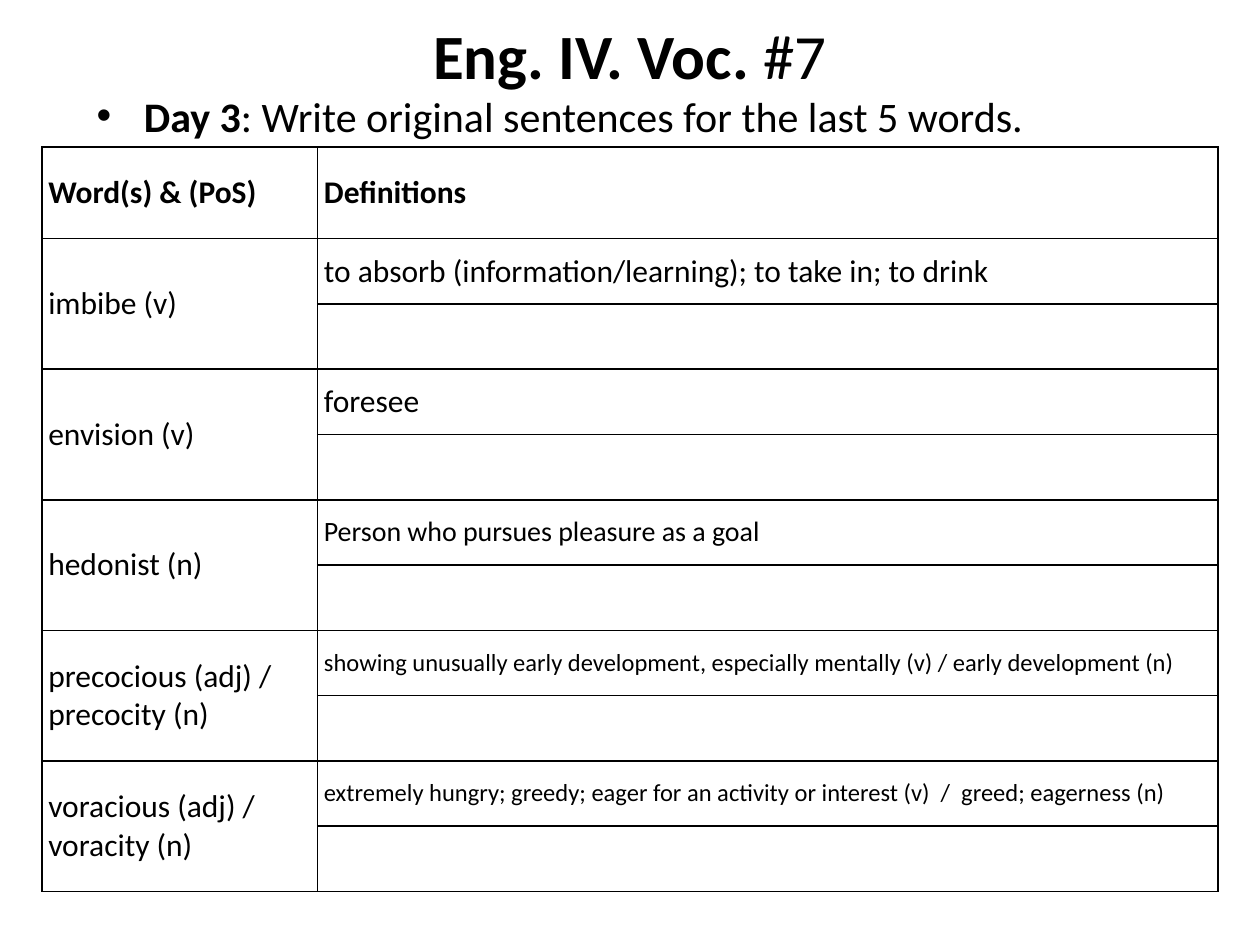
import lxml.etree
import pptx
import pptx.dml.color
import pptx.enum.text
import pptx.oxml
import pptx.oxml.ns
import pptx.util

BLACK = pptx.dml.color.RGBColor(0, 0, 0)
FONT = "Calibri"
ANCHOR = pptx.enum.text.MSO_ANCHOR
ALIGN = pptx.enum.text.PP_ALIGN


def add_text(paragraph, text, size=18, bold=False, color=BLACK):
    run = paragraph.add_run()
    run.text = text
    run.font.name = FONT
    run.font.size = pptx.util.Pt(size)
    run.font.bold = bold
    run.font.color.rgb = color


def format_cell(cell):
    cell.fill.background()
    cell.vertical_anchor = ANCHOR.MIDDLE
    cell.margin_left = cell.margin_right = pptx.util.Pt(3.6)
    cell.margin_top = cell.margin_bottom = 0
    properties = cell._tc.get_or_add_tcPr()
    for position, side in enumerate(("lnL", "lnR", "lnT", "lnB")):
        border = pptx.oxml.parse_xml(
            f'<a:{side} {pptx.oxml.ns.nsdecls("a")} w="{pptx.util.Pt(1)}">'
            f'<a:solidFill><a:srgbClr val="{BLACK}"/></a:solidFill></a:{side}>'
        )
        properties.insert(position, border)


presentation = pptx.Presentation()
presentation.slide_width = pptx.util.Pt(720)
presentation.slide_height = pptx.util.Pt(540)
slide = presentation.slides.add_slide(presentation.slide_layouts[1])

title = slide.shapes.title
title.left, title.top = pptx.util.Pt(36), pptx.util.Pt(0)
title.width, title.height = pptx.util.Pt(648), pptx.util.Pt(62.5)
title.text_frame.auto_size = pptx.enum.text.MSO_AUTO_SIZE.NONE
title.text_frame.vertical_anchor = ANCHOR.MIDDLE
paragraph = title.text_frame.paragraphs[0]
paragraph.alignment = ALIGN.CENTER
add_text(paragraph, "Eng. IV. Voc. ", size=36, bold=True)
add_text(paragraph, "#7", size=36)

task = slide.placeholders[1]
task.left, task.top = pptx.util.Pt(48), pptx.util.Pt(48)
task.width, task.height = pptx.util.Pt(648), pptx.util.Pt(36)
task.text_frame.auto_size = pptx.enum.text.MSO_AUTO_SIZE.NONE
paragraph = task.text_frame.paragraphs[0]
paragraph_properties = paragraph._p.get_or_add_pPr()
paragraph_properties.set("marL", str(pptx.util.Pt(27)))
paragraph_properties.set("indent", str(pptx.util.Pt(-27)))
bullet = lxml.etree.SubElement(paragraph_properties, pptx.oxml.ns.qn("a:buChar"))
bullet.set("char", "•")
add_text(paragraph, "Day 3", size=24, bold=True)
add_text(paragraph, ": Write original sentences for the last 5 words.", size=24)

vocabulary = [
    ("imbibe (v)", "to absorb (information/learning); to take in; to drink", 18),
    ("envision (v)", "foresee", 18),
    ("hedonist (n)", "Person who pursues pleasure as a goal", 16),
    ("precocious (adj) / precocity (n)",
     "showing unusually early development, especially mentally (v) / early development (n)", 14),
    ("voracious (adj) / voracity (n)",
     "extremely hungry; greedy; eager for an activity or interest (v)  /  greed; eagerness (n)", 14),
]
header_height, row_height = 52.4, 37.33
row_count = 1 + 2 * len(vocabulary)
table = slide.shapes.add_table(
    row_count, 2, pptx.util.Pt(24), pptx.util.Pt(84), pptx.util.Pt(672),
    pptx.util.Pt(header_height + row_height * (row_count - 1)),
).table
table.first_row = False
table.horz_banding = False
table.columns[0].width = pptx.util.Pt(157.5)
table.columns[1].width = pptx.util.Pt(514.5)
for index, row in enumerate(table.rows):
    row.height = pptx.util.Pt(row_height if index else header_height)
    for cell in row.cells:
        format_cell(cell)

for column, heading in enumerate(("Word(s) & (PoS)", "Definitions")):
    add_text(table.cell(0, column).text_frame.paragraphs[0], heading, bold=True)
for index, (word, definition, size) in enumerate(vocabulary):
    row = 1 + 2 * index
    table.cell(row, 0).merge(table.cell(row + 1, 0))
    add_text(table.cell(row, 0).text_frame.paragraphs[0], word)
    add_text(table.cell(row, 1).text_frame.paragraphs[0], definition, size=size)

presentation.save("out.pptx")
